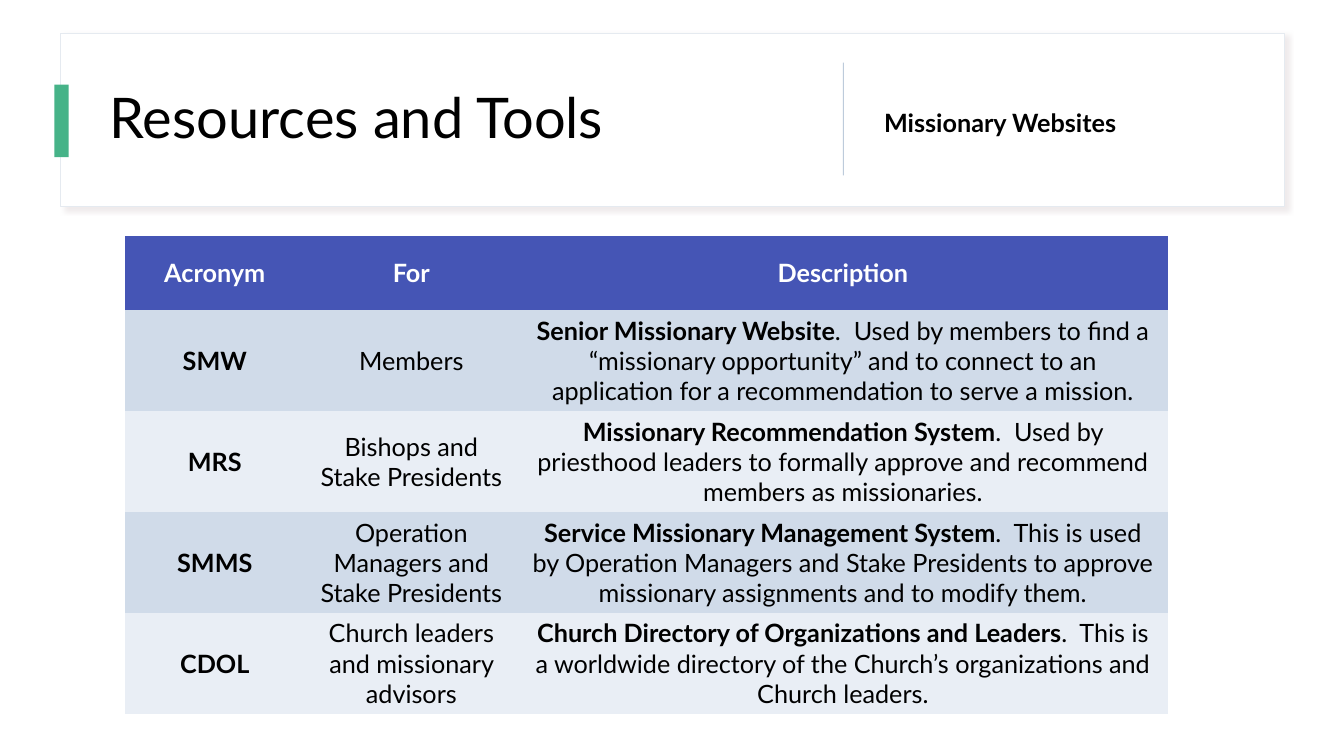
from typing import NamedTuple

from lxml import etree
from pptx import Presentation
from pptx.dml.color import RGBColor
from pptx.enum.shapes import MSO_SHAPE
from pptx.enum.text import MSO_ANCHOR, PP_ALIGN
from pptx.oxml import parse_xml
from pptx.oxml.ns import nsdecls, qn
from pptx.util import Inches, Pt

RECT = MSO_SHAPE.RECTANGLE
MIDDLE = MSO_ANCHOR.MIDDLE
CENTER = PP_ALIGN.CENTER

FONT = "Lato"
BLACK = RGBColor(0x00, 0x00, 0x00)
WHITE = RGBColor(0xFF, 0xFF, 0xFF)
EDGE = RGBColor(0xE5, 0xEA, 0xF0)
GREEN = RGBColor(0x46, 0xB3, 0x88)
RULE = RGBColor(0xBD, 0xCB, 0xDB)
BLUE = RGBColor(0x45, 0x55, 0xB5)
BANDS = (RGBColor(0xD0, 0xDB, 0xE9), RGBColor(0xE9, 0xEE, 0xF5))

WIDTHS = (1.78, 2.12, 6.44)
HEAD_HEIGHT = 0.74
ROW_HEIGHT = 1.0


class Box(NamedTuple):
    left: float
    top: float
    width: float
    height: float


class Label(NamedTuple):
    box: Box
    text: str
    size: int
    bold: bool
    spacing: float


class Site(NamedTuple):
    short: str
    users: str
    name: str
    detail: str


class Part(NamedTuple):
    text: str
    bold: bool


FRAME = Box(0.6, 0.33, 12.14, 1.72)
ACCENT = Box(0.54, 0.84, 0.14, 0.72)
DIVIDER = Box(8.36, 0.62, 0.01, 1.12)

LABELS = (
    Label(Box(0.99, 0.44, 7.03, 1.5), "Resources and Tools", 40, False, 0.9),
    Label(Box(8.67, 0.55, 3.16, 1.3), "Missionary Websites", 18, True, 1.1),
)

HEADERS = ("Acronym", "For", "Description")
SITES = (
    Site("SMW", "Members", "Senior Missionary Website",
         ".  Used by members to find a “missionary opportunity” and to connect "
         "to an application for a recommendation to serve a mission."),
    Site("MRS", "Bishops and Stake Presidents", "Missionary Recommendation System",
         ".  Used by priesthood leaders to formally approve and recommend "
         "members as missionaries."),
    Site("SMMS", "Operation Managers and Stake Presidents",
         "Service Missionary Management System",
         ".  This is used by Operation Managers and Stake Presidents to approve "
         "missionary assignments and to modify them."),
    Site("CDOL", "Church leaders and missionary advisors",
         "Church Directory of Organizations and Leaders",
         ".  This is a worldwide directory of the Church’s organizations and "
         "Church leaders."),
)


def place(box: Box) -> list:
    return [Inches(side) for side in box]


def add_run(para, text: str, size: int, bold: bool, color: RGBColor) -> None:
    run = para.add_run()
    run.text = text
    run.font.name = FONT
    run.font.size = Pt(size)
    run.font.bold = bold
    run.font.color.rgb = color


def add_rect(slide, box: Box, color: RGBColor):
    shape = slide.shapes.add_shape(RECT, *place(box))
    shape.shadow.inherit = False
    shape.fill.solid()
    shape.fill.fore_color.rgb = color
    shape.line.fill.background()
    return shape


def add_frame(slide) -> None:
    frame = add_rect(slide, FRAME, WHITE)
    frame.line.color.rgb = EDGE
    frame.line.width = Pt(1)
    effects = frame._element.spPr.find(qn("a:effectLst"))
    effects.append(parse_xml(
        f'<a:outerShdw {nsdecls("a")} blurRad="{Pt(4)}" dist="{Pt(3)}" '
        'dir="2700000" algn="tl" rotWithShape="0"><a:srgbClr val="CABCC0">'
        '<a:alpha val="30000"/></a:srgbClr></a:outerShdw>'))


def add_label(slide, label: Label) -> None:
    frame = slide.shapes.add_textbox(*place(label.box)).text_frame
    frame.word_wrap = True
    frame.vertical_anchor = MIDDLE
    para = frame.paragraphs[0]
    para.line_spacing = label.spacing
    add_run(para, label.text, label.size, label.bold, BLACK)


def fill_cell(cell, parts: list[Part], fill: RGBColor, color: RGBColor) -> None:
    cell.fill.solid()
    cell.fill.fore_color.rgb = fill
    cell.vertical_anchor = MIDDLE
    para = cell.text_frame.paragraphs[0]
    para.alignment = CENTER
    for part in parts:
        add_run(para, part.text, 18, part.bold, color)


def add_sites(slide) -> None:
    height = HEAD_HEIGHT + ROW_HEIGHT * len(SITES)
    box = Box(1.24, 2.34, sum(WIDTHS), height)
    graphic = slide.shapes.add_table(len(SITES) + 1, len(WIDTHS), *place(box))
    table = graphic.table
    style = table._tbl.tblPr.find(qn("a:tableStyleId"))
    style.text = "{2D5ABB26-0587-4C30-8999-92F81FD0307C}"
    table.horz_banding = False
    for column, width in zip(table.columns, WIDTHS):
        column.width = Inches(width)
    for index, row in enumerate(table.rows):
        row.height = Inches(ROW_HEIGHT if index else HEAD_HEIGHT)
    for column, text in enumerate(HEADERS):
        fill_cell(table.cell(0, column), [Part(text, True)], BLUE, WHITE)
    for index, site in enumerate(SITES):
        row = (
            [Part(site.short, True)],
            [Part(site.users, False)],
            [Part(site.name, True), Part(site.detail, False)],
        )
        for column, parts in enumerate(row):
            cell = table.cell(index + 1, column)
            fill_cell(cell, parts, BANDS[index % 2], BLACK)


def main() -> None:
    deck = Presentation()
    deck.slide_width = Inches(13.33)
    deck.slide_height = Inches(7.5)
    slide = deck.slides.add_slide(deck.slide_layouts[6])
    add_frame(slide)
    for label in LABELS:
        add_label(slide, label)
    add_rect(slide, ACCENT, GREEN)
    add_rect(slide, DIVIDER, RULE)
    add_sites(slide)
    deck.save("out.pptx")


if __name__ == "__main__":
    main()
